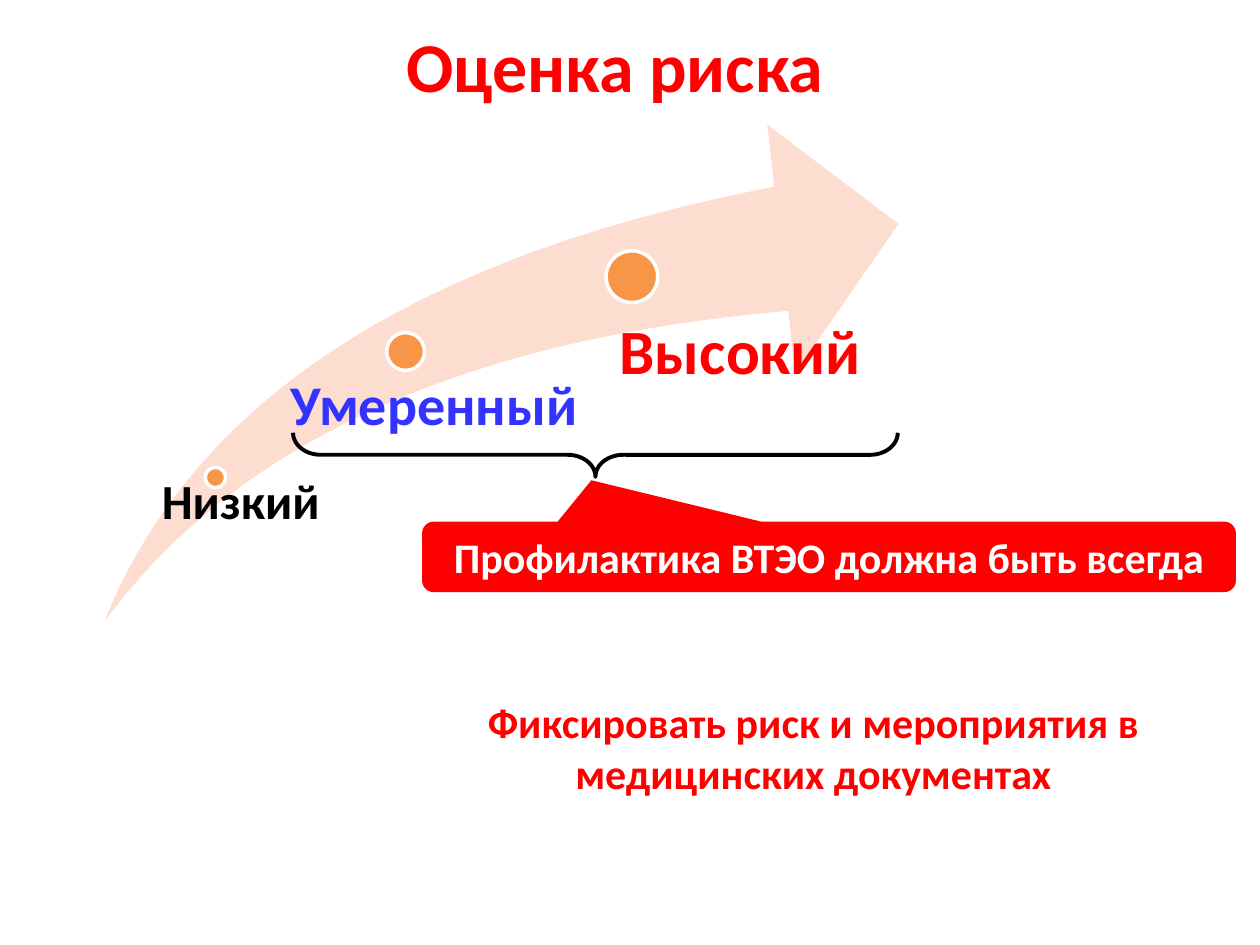
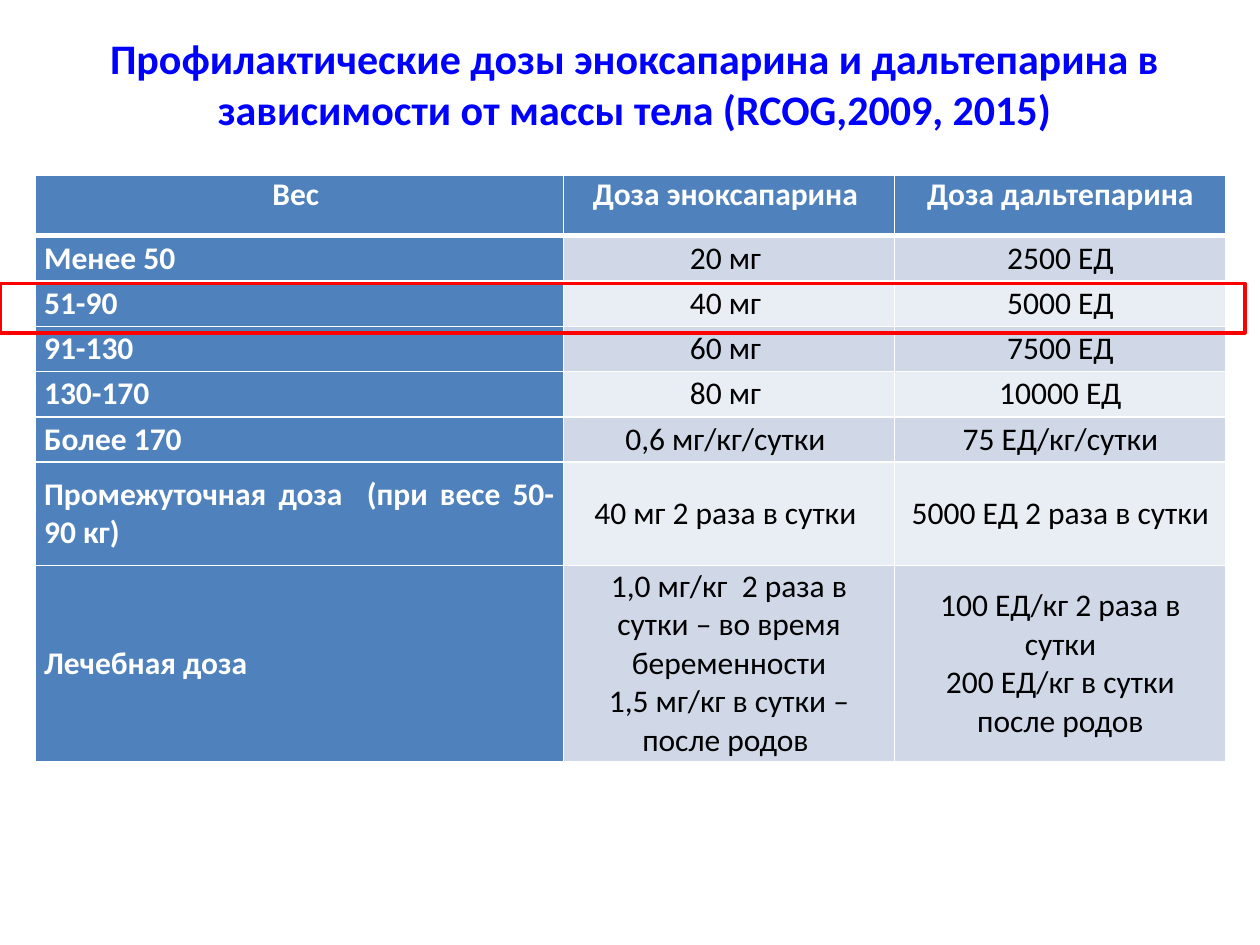
from lxml import etree
from pptx import Presentation
from pptx.dml.color import RGBColor
from pptx.enum.shapes import MSO_SHAPE as SHAPE
from pptx.enum.text import MSO_ANCHOR as ANCHOR, PP_ALIGN as ALIGN
from pptx.oxml.ns import qn
from pptx.util import Pt

FONT = "Calibri"
WHITE = RGBColor(0xFF, 0xFF, 0xFF)
BLACK = RGBColor(0, 0, 0)
RED = RGBColor(0xFF, 0, 0)
BLUE = RGBColor(0, 0, 0xFF)
VIOLET = RGBColor(0x33, 0x33, 0xFF)
PEACH = RGBColor(0xFC, 0xDD, 0xCF)
ORANGE = RGBColor(0xF7, 0x96, 0x46)
HEAD_BLUE = RGBColor(0x4F, 0x81, 0xBD)
BAND_DARK = RGBColor(0xD0, 0xD8, 0xE8)
BAND_LIGHT = RGBColor(0xE9, 0xED, 0xF4)

# label, size, colour, dot centre, dot diameter, label left / top / width
RISK_LEVELS = [
    ("Низкий", 28, BLACK, (63.3, 201.6), 11.5, (26.6, 201.6, 164.9)),
    ("Умеренный", 32, VIOLET, (172, 129.6), 21.6, (95, 144, 244.8)),
    ("Высокий", 36, RED, (301.3, 86.8), 29.5, (278.6, 111.6, 169.9)),
]

DOSE_COLS = [301.7, 189.4, 189.4]
DOSE_ROW_HEIGHTS = [34.6] + [25.9] * 5 + [59, 112.3]
DOSES = [
    ("Вес ", "Доза эноксапарина ", "Доза дальтепарина"),
    ("Менее 50 ", "20 мг ", "2500 ЕД"),
    ("51-90 ", "40 мг ", "5000 ЕД"),
    ("91-130 ", "60 мг ", "7500 ЕД"),
    ("130-170", "80 мг ", "10000 ЕД"),
    ("Более 170 ", "0,6 мг/кг/сутки ", "75 ЕД/кг/сутки"),
    ("Промежуточная доза  (при весе 50-90 кг) ", "40 мг 2 раза в сутки ",
     "5000 ЕД 2 раза в сутки"),
    ("Лечебная доза ",
     "1,0 мг/кг  2 раза в сутки – во время беременности\n1,5 мг/кг в сутки –после родов ",
     "100 ЕД/кг 2 раза в сутки\n200 ЕД/кг в сутки после родов"),
]


def write(tf, text, size, color, bold=True, align=ALIGN.CENTER):
    """Fill a text frame, one paragraph for each line of text."""
    tf.word_wrap = True
    for i, line in enumerate(text.split("\n")):
        p = tf.add_paragraph() if i else tf.paragraphs[0]
        p.alignment = align
        r = p.add_run()
        r.text = line
        r.font.name = FONT
        r.font.size = Pt(size)
        r.font.bold = bold
        r.font.color.rgb = color


def add_text(s, box, text, size, color, align=ALIGN.CENTER):
    tf = s.shapes.add_textbox(*map(Pt, box)).text_frame
    write(tf, text, size, color, align=align)
    return tf


def add_shape(s, kind, box, fill=None, line=None, weight=0, adjust=()):
    sp = s.shapes.add_shape(kind, *map(Pt, box))
    sp.shadow.inherit = False
    if fill is None:
        sp.fill.background()
    else:
        sp.fill.solid()
        sp.fill.fore_color.rgb = fill
    if line is None:
        sp.line.fill.background()
    else:
        sp.line.color.rgb = line
        sp.line.width = Pt(weight)
    for i, value in enumerate(adjust):
        sp.adjustments[i] = value
    return sp


def add_risk_arrow(s, box):
    left, top, _, height = box
    add_shape(s, SHAPE.SWOOSH_ARROW, box, PEACH, adjust=(0.25, 0.25))
    for text, size, color, (cx, cy), d, (x, y, width) in RISK_LEVELS:
        dot = (left + cx - d / 2, top + cy - d / 2, d, d)
        add_shape(s, SHAPE.OVAL, dot, ORANGE, WHITE, 2)
        # each label box reaches down to the foot of the arrow
        tf = add_text(s, (left + x, top + y, width, height - y),
                      text, size, color, ALIGN.LEFT)
        tf.margin_left = Pt(0.53 * d)
        tf.margin_top = tf.margin_right = tf.margin_bottom = 0
        tf.paragraphs[0].line_spacing = 0.9


def add_callout(s, box, text):
    sp = add_shape(s, SHAPE.ROUNDED_RECTANGULAR_CALLOUT, box, RED,
                   adjust=(-0.292, -1.086, 0.167))
    sp.text_frame.vertical_anchor = ANCHOR.MIDDLE
    write(sp.text_frame, text, 24, WHITE)


def add_brace_below(s, box):
    """Draw a brace that opens upwards and spans the box."""
    left, top, width, height = box
    upright = (left + (width - height) / 2, top + (height - width) / 2, height, width)
    sp = add_shape(s, SHAPE.RIGHT_BRACE, upright, None, BLACK, 2.25, (0.628, 0.5))
    sp.rotation = 90


def set_borders(cell, bottom_weight):
    tc_pr = cell._tc.get_or_add_tcPr()
    for side, weight in (("L", 1), ("R", 1), ("T", 1), ("B", bottom_weight)):
        ln = etree.SubElement(tc_pr, qn(f"a:ln{side}"), w=str(Pt(weight)))
        fill = etree.SubElement(ln, qn("a:solidFill"))
        etree.SubElement(fill, qn("a:srgbClr"), val=str(WHITE))


def style_dose_cell(cell, row, col, text):
    is_head = row == 0
    is_label = is_head or col == 0
    set_borders(cell, 3 if is_head else 1)
    band = BAND_DARK if row % 2 else BAND_LIGHT
    cell.fill.solid()
    cell.fill.fore_color.rgb = HEAD_BLUE if is_label else band
    cell.margin_left = cell.margin_right = Pt(5)
    cell.margin_top = cell.margin_bottom = 0
    cell.vertical_anchor = ANCHOR.TOP if is_head else ANCHOR.MIDDLE
    align = ALIGN.JUSTIFY if col == 0 and not is_head else ALIGN.CENTER
    write(cell.text_frame, text, 18, WHITE if is_label else BLACK, is_label, align)


def add_dose_table(s, left, top):
    box = (left, top, sum(DOSE_COLS), sum(DOSE_ROW_HEIGHTS))
    table = s.shapes.add_table(len(DOSES), len(DOSE_COLS), *map(Pt, box)).table
    table.first_col = True
    for column, width in zip(table.columns, DOSE_COLS):
        column.width = Pt(width)
    for i, (height, texts) in enumerate(zip(DOSE_ROW_HEIGHTS, DOSES)):
        table.rows[i].height = Pt(height)
        for j, text in enumerate(texts):
            style_dose_cell(table.cell(i, j), i, j, text)


def risk_slide(s):
    add_text(s, (76.3, 9.4, 550, 55.4), "Оценка риска", 40, RED)
    add_callout(s, (241.2, 298.1, 465.1, 40.3), "Профилактика ВТЭО должна быть всегда")
    add_risk_arrow(s, (59.8, 71.3, 453.6, 283.7))
    add_brace_below(s, (167.4, 247.3, 345.6, 25.2))
    add_text(s, (223.9, 394.6, 481.7, 65.5),
             "Фиксировать риск и мероприятия в медицинских документах", 24, RED)


def dose_slide(s):
    add_text(s, (31, 15.1, 663.1, 65.5),
             "Профилактические дозы эноксапарина и дальтепарина в зависимости "
             "от массы тела (RCOG,2009, 2015)", 24, BLUE)
    add_dose_table(s, 20.2, 100.1)
    add_shape(s, SHAPE.RECTANGLE, (0, 162, 711.4, 28.1), None, RED, 2.25)


def main():
    prs = Presentation()
    prs.slide_width, prs.slide_height = Pt(720), Pt(540)
    for build in (risk_slide, dose_slide):
        build(prs.slides.add_slide(prs.slide_layouts[6]))
    prs.save("out.pptx")


if __name__ == "__main__":
    main()
